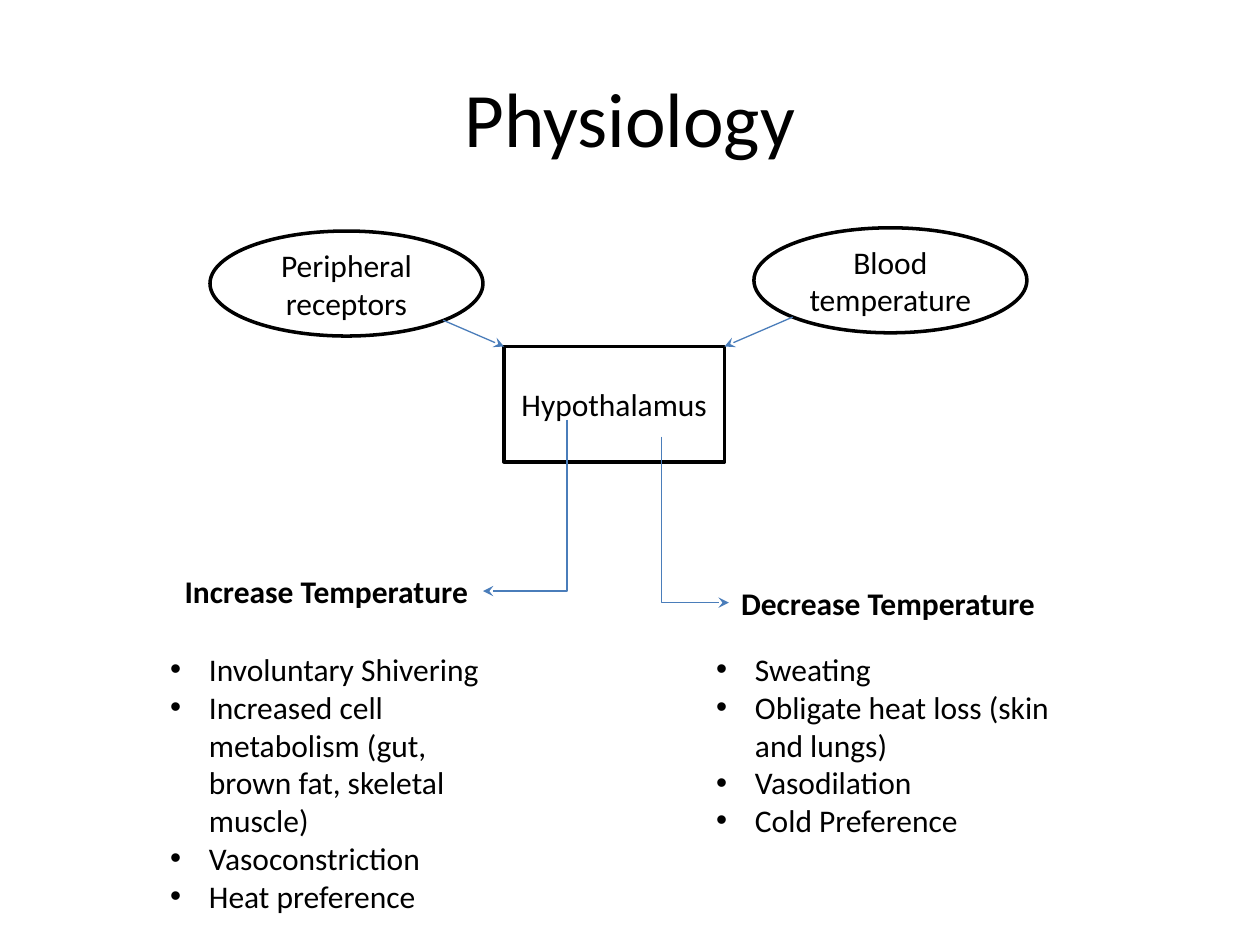
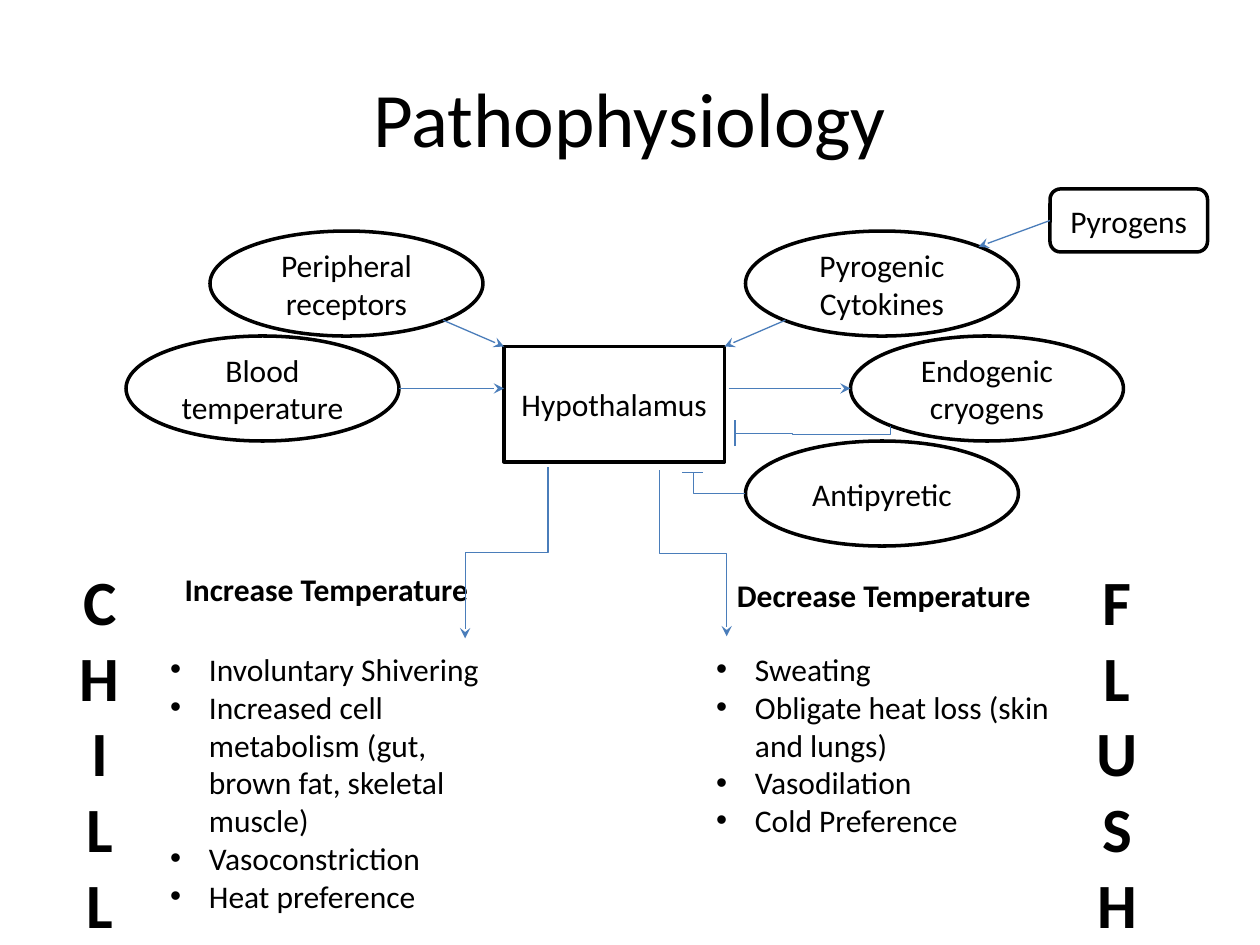
from lxml import etree
from pptx import Presentation
from pptx import util as u
from pptx.dml.color import RGBColor
from pptx.enum import shapes, text
from pptx.oxml.ns import qn

EMU_PER_PX = 7620  # 120 px to the inch
BLACK = RGBColor(0x00, 0x00, 0x00)
WHITE = RGBColor(0xFF, 0xFF, 0xFF)
BLUE = RGBColor(0x4A, 0x7D, 0xBA)
FONT = "Calibri"
ELLIPSE_SIZE = (260, 100)
TWO_CONTENT = 3

HEATING = [
    "Involuntary Shivering",
    "Increased cell metabolism (gut, brown fat, skeletal muscle)",
    "Vasoconstriction",
    "Heat preference",
]
COOLING = [
    "Sweating",
    "Obligate heat loss (skin and lungs)",
    "Vasodilation",
    "Cold Preference",
]


def px(n):
    return u.Emu(round(n * EMU_PER_PX))


def place(sp, x, y, w, h):
    sp.left, sp.top, sp.width, sp.height = map(px, (x, y, w, h))


def set_text(sp, lines, size, bold=False, align=text.PP_ALIGN.LEFT):
    tf = sp.text_frame
    tf.word_wrap = True
    tf.auto_size = text.MSO_AUTO_SIZE.NONE
    tf.text = "\n".join(lines)
    for p in tf.paragraphs:
        p.alignment = align
        p.space_before = u.Pt(0)
        f = p.font
        f.name, f.size, f.bold = FONT, u.Pt(size), bold
        f.color.rgb = BLACK
    return tf


def add_node(s, label, x, y, w, h, kind):
    sp = s.shapes.add_shape(kind, *map(px, (x, y, w, h)))
    sp.shadow.inherit = False
    sp.fill.solid()
    sp.fill.fore_color.rgb = WHITE
    sp.line.color.rgb = BLACK
    sp.line.width = u.Pt(2)
    tf = set_text(sp, [label], 18, align=text.PP_ALIGN.CENTER)
    tf.vertical_anchor = text.MSO_ANCHOR.MIDDLE


def add_ellipse(s, label, x, y):
    add_node(s, label, x, y, *ELLIPSE_SIZE, shapes.MSO_SHAPE.OVAL)


def add_heading(s, label, x, y):
    sp = s.shapes.add_textbox(*map(px, (x, y, 310, 48)))
    set_text(sp, [label], 18, bold=True)


def add_letters(s, word, x):
    """Stack the letters of a word downwards."""
    sp = s.shapes.add_textbox(*map(px, (x, 536, 72, 364)))
    tf = set_text(sp, word, 36, bold=True, align=text.PP_ALIGN.CENTER)
    tf.margin_left = tf.margin_right = tf.margin_top = tf.margin_bottom = 0


def fill_list(sp, items, x, h):
    place(sp, x, 613, 345, h)
    for p in set_text(sp, items, 18).paragraphs:
        pPr = p._p.get_or_add_pPr()
        indent = px(37)
        pPr.set("marL", str(indent))
        pPr.set("indent", str(-indent))


def add_line(s, x1, y1, x2, y2, arrow=True, kind=shapes.MSO_CONNECTOR.STRAIGHT):
    cn = s.shapes.add_connector(kind, *map(px, (x1, y1, x2, y2)))
    cn.line.color.rgb = BLUE
    cn.line.width = u.Pt(0.75)
    spPr = cn.element.spPr
    if arrow:
        etree.SubElement(spPr.find(qn("a:ln")), qn("a:tailEnd"), type="stealth")
    etree.SubElement(spPr, qn("a:effectLst"))
    return cn


def add_elbow(s, x1, y1, x2, y2, preset, adjust=(), arrow=False):
    """Bent connector whose adjustments are thousandths of its size."""
    cn = add_line(s, x1, y1, x2, y2, arrow, shapes.MSO_CONNECTOR.ELBOW)
    geom = cn.element.spPr.find(qn("a:prstGeom"))
    geom.set("prst", preset)
    guides = geom.find(qn("a:avLst"))
    if guides is None:
        guides = etree.SubElement(geom, qn("a:avLst"))
    for i, value in enumerate(adjust, 1):
        etree.SubElement(guides, qn("a:gd"), name=f"adj{i}", fmla=f"val {value * 100}")
    return cn


def add_drop(s, x1, y1, x2, y2, preset):
    """Elbow arrow that leaves downwards: a lying one turned by a quarter."""
    mid_x, mid_y = (x1 + x2) / 2, (y1 + y2) / 2
    half_w, half_h = abs(y2 - y1) / 2, abs(x2 - x1) / 2
    cn = add_elbow(s, mid_x - half_w, mid_y - half_h,
                   mid_x + half_w, mid_y + half_h, preset, arrow=True)
    xfrm = cn.element.spPr.find(qn("a:xfrm"))
    if x2 < x1:
        xfrm.set("rot", "5400000")
    else:
        xfrm.set("rot", "16200000")
        xfrm.set("flipH", "1")


def add_regulation_slide(prs, title):
    """Start a slide with what both share: hypothalamus, receptors, responses."""
    s = prs.slides.add_slide(prs.slide_layouts[TWO_CONTENT])
    place(s.shapes.title, 60, 36, 1080, 150)
    tf = set_text(s.shapes.title, [title], 44, align=text.PP_ALIGN.CENTER)
    tf.vertical_anchor = text.MSO_ANCHOR.MIDDLE
    fill_list(s.placeholders[1], HEATING, 150, 266)
    fill_list(s.placeholders[2], COOLING, 670, 194)
    add_node(s, "Hypothalamus", 480, 330, 210, 110, shapes.MSO_SHAPE.RECTANGLE)
    add_ellipse(s, "Peripheral receptors", 200, 220)
    add_line(s, 422, 305, 480, 330)
    return s


def add_physiology(prs):
    s = add_regulation_slide(prs, "Physiology")
    add_ellipse(s, "Blood temperature", 718, 217)
    add_line(s, 755, 302, 690, 330)
    add_heading(s, "Increase Temperature", 164, 539)
    add_heading(s, "Decrease Temperature", 694, 550)
    add_drop(s, 540, 400, 460, 563, "bentConnector2")
    add_drop(s, 630, 416, 694, 574, "bentConnector2")


def add_pathophysiology(prs):
    s = add_regulation_slide(prs, "Pathophysiology")
    add_ellipse(s, "Blood temperature", 120, 320)
    add_line(s, 380, 370, 480, 370)
    add_heading(s, "Increase Temperature", 164, 537)
    add_heading(s, "Decrease Temperature", 690, 543)
    add_drop(s, 522, 445, 443, 608, "bentConnector3")
    add_drop(s, 628, 448, 692, 606, "bentConnector3")

    add_ellipse(s, "Pyrogenic Cytokines", 710, 220)
    add_line(s, 748, 305, 690, 330)
    add_node(s, "Pyrogens", 1000, 180, 150, 60, shapes.MSO_SHAPE.ROUNDED_RECTANGLE)
    add_line(s, 1000, 210, 932, 235)

    add_ellipse(s, "Endogenic cryogens", 810, 320)
    add_line(s, 694, 370, 810, 370)
    add_elbow(s, 700, 413, 848, 406, "bentConnector4", (371, -117))
    add_line(s, 700, 425, 700, 400, arrow=False)

    add_ellipse(s, "Antipyretic", 710, 420)
    add_elbow(s, 710, 470, 662, 450, "bentConnector3", (1030,))
    add_line(s, 650, 450, 670, 450, arrow=False)

    add_letters(s, "CHILL", 59)
    add_letters(s, "FLUSH", 1028)


def main():
    prs = Presentation()
    prs.slide_width, prs.slide_height = px(1200), px(900)
    add_physiology(prs)
    add_pathophysiology(prs)
    prs.save("out.pptx")


if __name__ == "__main__":
    main()
